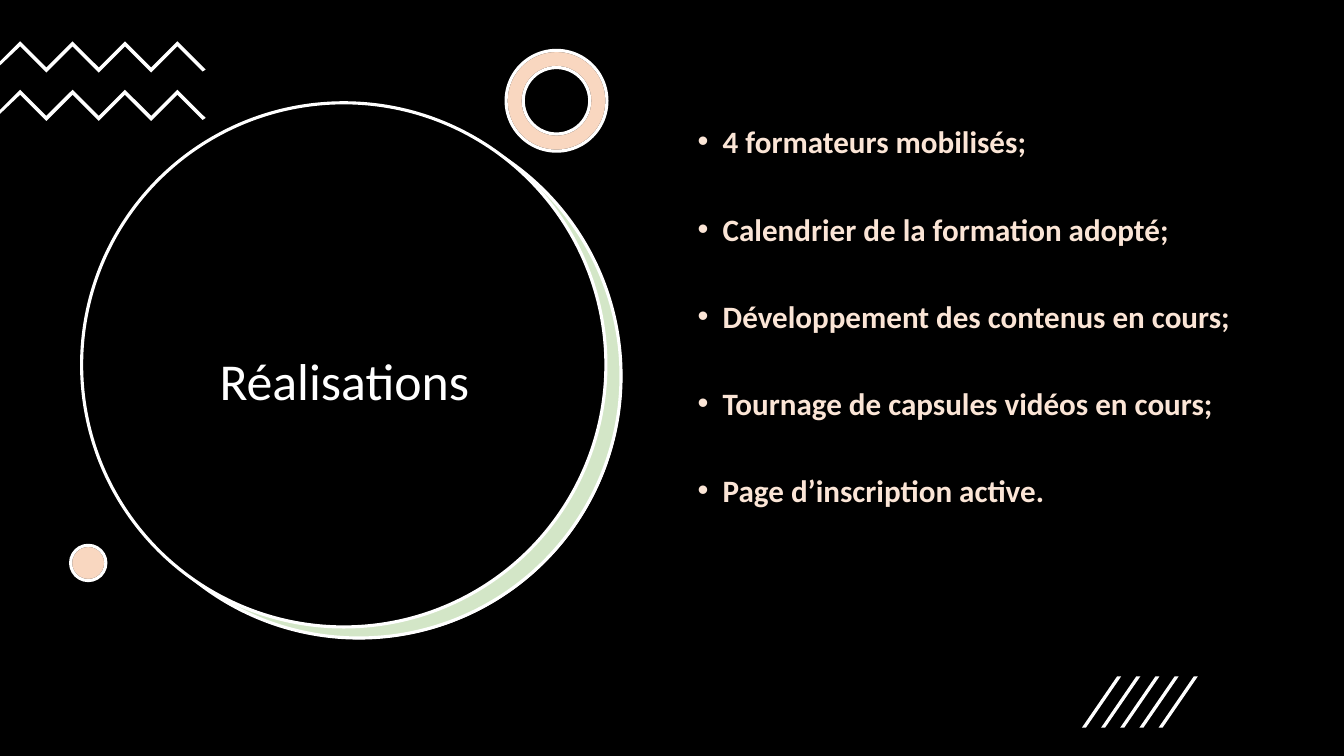
from lxml import etree
from pptx import Presentation
from pptx.dml.color import RGBColor
from pptx.enum.shapes import MSO_SHAPE
from pptx.enum.text import MSO_ANCHOR, PP_ALIGN
from pptx.oxml.ns import qn
from pptx.util import Inches, Pt

RECTANGLE, OVAL, DONUT = MSO_SHAPE.RECTANGLE, MSO_SHAPE.OVAL, MSO_SHAPE.DONUT
MIDDLE, TOP = MSO_ANCHOR.MIDDLE, MSO_ANCHOR.TOP
CENTER, LEFT = PP_ALIGN.CENTER, PP_ALIGN.LEFT
BLACK = RGBColor(0x00, 0x00, 0x00)
WHITE = RGBColor(0xFF, 0xFF, 0xFF)
GREEN = RGBColor(0x70, 0xAD, 0x47)
ORANGE = RGBColor(0xED, 0x7D, 0x31)
PEACH = RGBColor(0xFB, 0xE5, 0xD6)

# Content
TITLE = "Réalisations"
ACHIEVEMENTS = [
    "4 formateurs mobilisés;",
    "Calendrier de la formation adopté;",
    "Développement des contenus en cours;",
    "Tournage de capsules vidéos en cours;",
    "Page d’inscription active.",
]

# Layout, in inches
WIDTH, HEIGHT = 13.33, 7.5
DISC = 5.2
RING, RING_BAND = (5.02, 0.5, 1, 1), 0.17
DOT = (0.7, 5.41, 0.35, 0.35)
TITLE_BOX = (1.21, 2.05, 4.41, 3.52)
LIST_BOX = (6.82, 1.24, 6.04, 4.17)
ZIGZAG_TOPS = (0.41, 0.89)
TOOTH, TEETH, BAND = 0.26, 7, 0.05
SLASH_LEFT, SLASH_TOP, SLASH_HEIGHT = 10.73, 6.71, 0.51
SLASHES, SLASH_STEP, SLASH_LEAN, SLASH_WIDTH = 5, 0.19, 0.35, 0.04

TITLE_FONT = {"name": "Calibri", "size": Pt(37), "bold": False}
LIST_FONT = {"name": "Calibri", "size": Pt(22.2), "bold": True}
TITLE_FORMAT = {"alignment": CENTER, "line_spacing": 0.9}
LIST_FORMAT = {"alignment": LEFT, "line_spacing": 0.8}
LIST_GAP = Pt(41)

presentation = Presentation()
presentation.slide_width, presentation.slide_height = Inches(WIDTH), Inches(HEIGHT)
slide = presentation.slides.add_slide(presentation.slide_layouts[6])


def paint(shape, fill, line=None, opacity=None):
    shape.shadow.inherit = False
    shape.fill.solid()
    shape.fill.fore_color.rgb = fill
    if opacity:
        color = shape.fill._xPr.find(qn("a:solidFill"))[0]
        etree.SubElement(color, qn("a:alpha"), val=str(opacity * 1000))
    if line is None:
        shape.line.fill.background()
    else:
        shape.line.color.rgb = line
        shape.line.width = Pt(2.25)


def add_preset(kind, box, fill, line=None, opacity=None):
    shape = slide.shapes.add_shape(kind, *map(Inches, box))
    if kind == DONUT:
        shape.adjustments[0] = RING_BAND
    paint(shape, fill, line, opacity)


def add_outline(points):
    corners = [(Inches(x), Inches(y)) for x, y in points]
    builder = slide.shapes.build_freeform(*corners[0])
    builder.add_line_segments(corners[1:], close=True)
    paint(builder.convert_to_shape(), WHITE)


def add_text(box, lines, anchor, font, color, paragraph_format, bullet=None):
    frame = slide.shapes.add_textbox(*map(Inches, box)).text_frame
    frame.word_wrap = True
    frame.vertical_anchor = anchor
    for index, line in enumerate(lines):
        paragraph = frame.add_paragraph() if index else frame.paragraphs[0]
        for name, value in paragraph_format.items():
            setattr(paragraph, name, value)
        if index:
            paragraph.space_before = LIST_GAP
        if bullet:
            properties = paragraph._p.get_or_add_pPr()
            properties.set("marL", str(Inches(0.25)))
            properties.set("indent", str(-Inches(0.25)))
            etree.SubElement(properties, qn("a:buFont"), typeface="Arial")
            etree.SubElement(properties, qn("a:buChar"), char=bullet)
        run = paragraph.add_run()
        run.text = line
        for name, value in font.items():
            setattr(run.font, name, value)
        run.font.color.rgb = color


# Background and large disc with its green crescent
add_preset(RECTANGLE, (0, 0, WIDTH, HEIGHT), BLACK)
add_preset(OVAL, (0.97, 1.14, DISC, DISC), WHITE)
add_preset(OVAL, (0.96, 1.13, DISC, DISC), GREEN, WHITE, 30)
add_preset(OVAL, (0.81, 1.02, DISC, DISC), BLACK, WHITE)
add_text(TITLE_BOX, [TITLE], MIDDLE, TITLE_FONT, WHITE, TITLE_FORMAT)

# Zigzags
for top in ZIGZAG_TOPS:
    bends = [(0.2 + TOOTH * i, top + TOOTH * (i % 2)) for i in range(TEETH)]
    upper = [(0, top + 0.2), *bends, (2.04, top + 0.28)]
    lower = [(0, top + 0.24), *((x, y + BAND) for x, y in bends), (2.01, top + 0.3)]
    add_outline(upper + lower[::-1])

# Ring and dot, each a tint over a white base
for kind, box in ((DONUT, RING), (OVAL, DOT)):
    add_preset(kind, box, WHITE, BLACK)
    add_preset(kind, box, ORANGE, WHITE, 30)

# Achievements
add_text(LIST_BOX, ACHIEVEMENTS, TOP, LIST_FONT, PEACH, LIST_FORMAT, "•")

# Slashes
for index in range(SLASHES):
    foot = SLASH_LEFT + index * SLASH_STEP
    head, bottom = foot + SLASH_LEAN, SLASH_TOP + SLASH_HEIGHT
    add_outline([(foot + SLASH_WIDTH, bottom), (foot, bottom),
                 (head, SLASH_TOP), (head + SLASH_WIDTH, SLASH_TOP)])

presentation.save("out.pptx")
